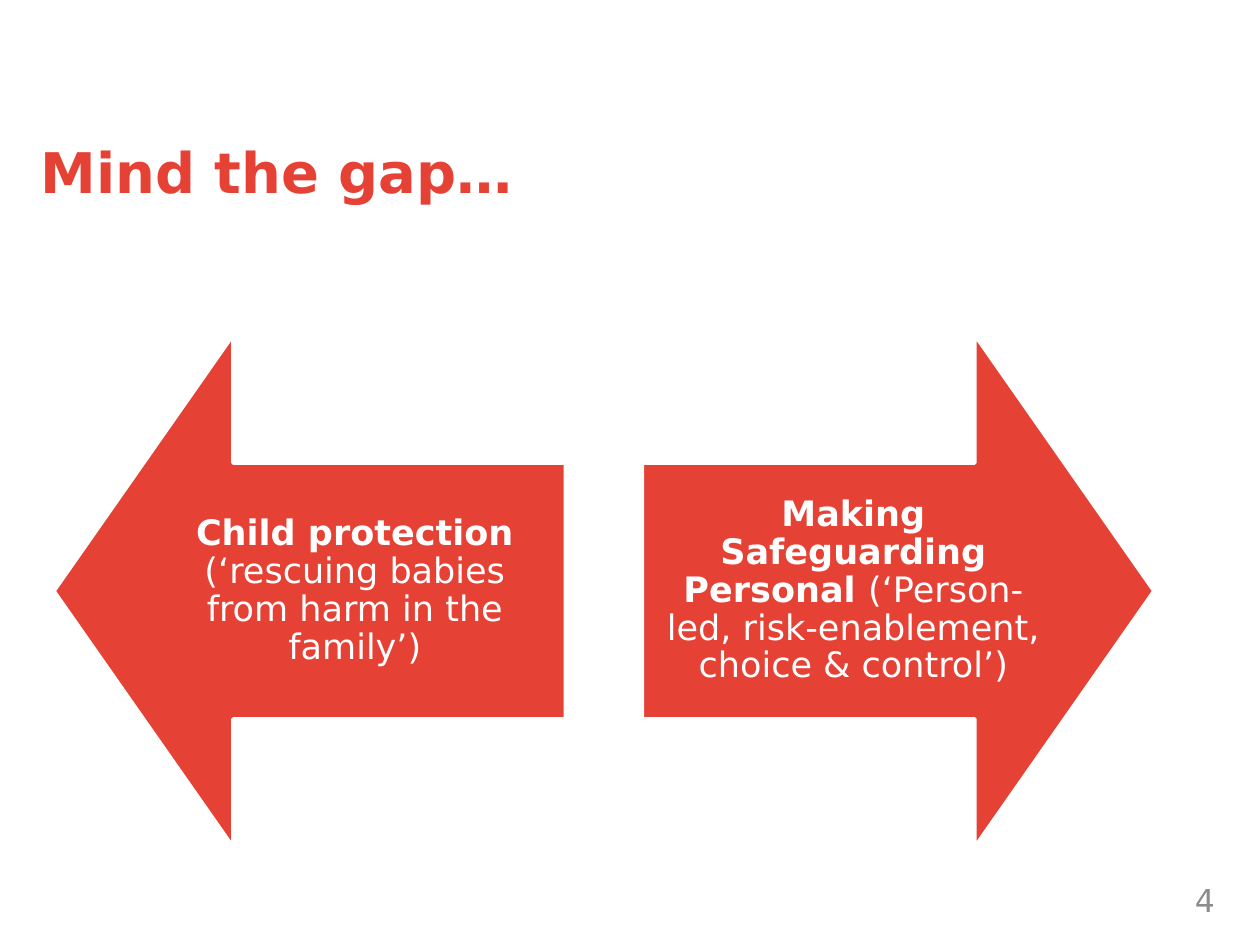
import pptx
import pptx.util
import pptx.dml.color
import pptx.enum.shapes
import pptx.enum.text

Cm = pptx.util.Cm
Pt = pptx.util.Pt
RED = "E64135"
WHITE = "FFFFFF"
GREY = "8C8C8C"


def color(hex_string):
    return pptx.dml.color.RGBColor.from_string(hex_string)


def format_paragraph(paragraph, size, hex_string, alignment):
    paragraph.alignment = alignment
    paragraph.font.name = "DejaVu Sans"
    paragraph.font.size = Pt(size)
    paragraph.font.color.rgb = color(hex_string)


presentation = pptx.Presentation()
presentation.slide_width = Cm(25.4)
presentation.slide_height = Cm(19.05)
slide = presentation.slides.add_slide(presentation.slide_layouts[5])

title = slide.shapes.title
title.left, title.top, title.width, title.height = Cm(0.56), Cm(2.79), Cm(24.13), Cm(3.15)
title.text_frame.text = "Mind the gap…"
title.text_frame.vertical_anchor = pptx.enum.text.MSO_ANCHOR.TOP
paragraph = title.text_frame.paragraphs[0]
format_paragraph(paragraph, 32, RED, pptx.enum.text.PP_ALIGN.LEFT)
paragraph.font.bold = True
paragraph.line_spacing = 0.9

arrow_size = Cm(10.31)
arrow_top = Cm(6.76)
label_width = Cm(8.51)
label_height = Cm(5.16)
label_top = arrow_top + (arrow_size - label_height) // 2
arrows = [
    (Cm(1.09), 270, Cm(2.9), "Child protection ",
     "(‘rescuing babies from harm in the family’)"),
    (Cm(12.95), 90, Cm(12.95), "Making Safeguarding Personal ",
     "(‘Person-led, risk-enablement, choice & control’)"),
]
for arrow_left, rotation, label_left, heading, explanation in arrows:
    arrow = slide.shapes.add_shape(
        pptx.enum.shapes.MSO_SHAPE.UP_ARROW, arrow_left, arrow_top, arrow_size, arrow_size)
    arrow.rotation = rotation
    arrow.adjustments[0] = 0.5
    arrow.adjustments[1] = 0.35
    arrow.shadow.inherit = False
    arrow.fill.solid()
    arrow.fill.fore_color.rgb = color(RED)
    arrow.line.color.rgb = color(WHITE)
    arrow.line.width = Pt(2)

    label = slide.shapes.add_textbox(label_left, label_top, label_width, label_height)
    frame = label.text_frame
    frame.word_wrap = True
    frame.vertical_anchor = pptx.enum.text.MSO_ANCHOR.MIDDLE
    frame.margin_left = frame.margin_right = frame.margin_top = frame.margin_bottom = Cm(0.4)
    paragraph = frame.paragraphs[0]
    format_paragraph(paragraph, 20, WHITE, pptx.enum.text.PP_ALIGN.CENTER)
    paragraph.line_spacing = 0.9
    paragraph.space_after = Pt(7)
    for text, bold in ((heading, True), (explanation, False)):
        run = paragraph.add_run()
        run.text = text
        run.font.bold = bold

page_number = slide.shapes.add_textbox(Cm(18.82), Cm(17.63), Cm(5.92), Cm(1.02))
page_number.text_frame.word_wrap = True
page_number.text_frame.vertical_anchor = pptx.enum.text.MSO_ANCHOR.MIDDLE
page_number.text_frame.text = "4"
format_paragraph(page_number.text_frame.paragraphs[0], 18, GREY, pptx.enum.text.PP_ALIGN.RIGHT)

presentation.save("out.pptx")
